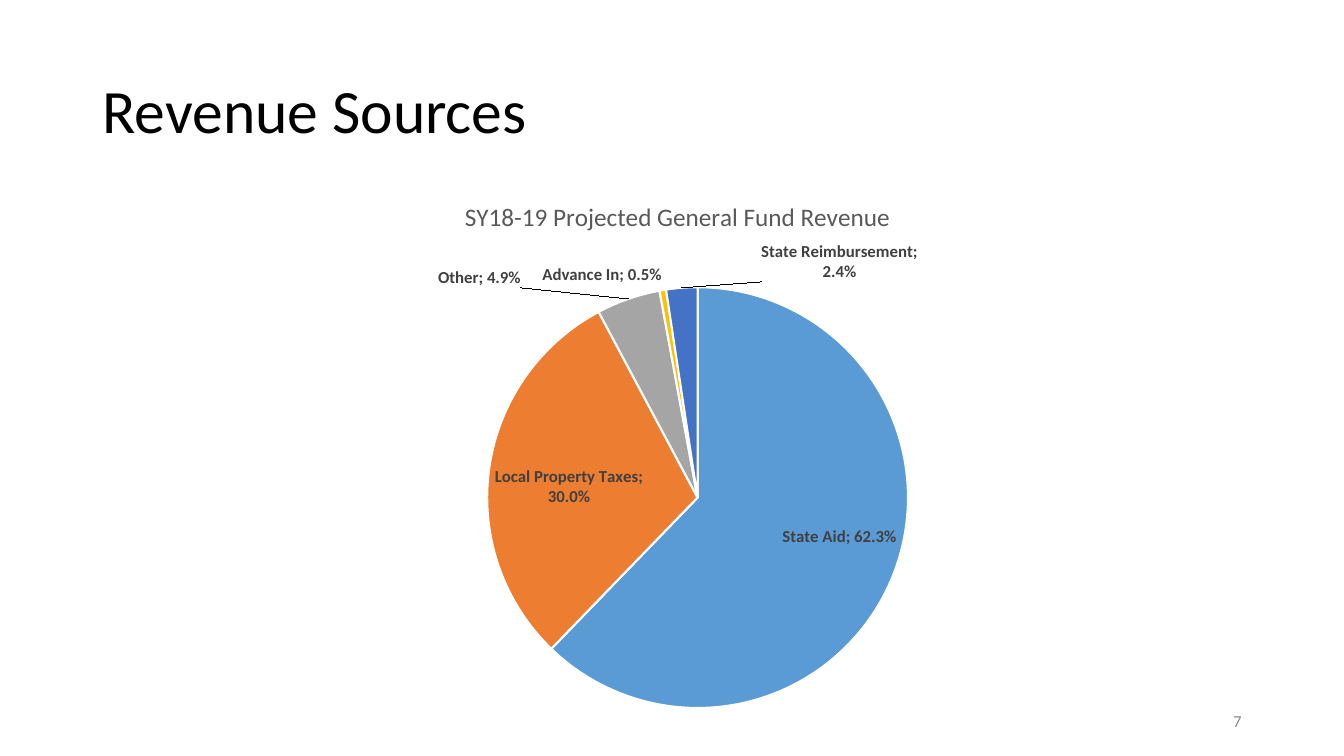
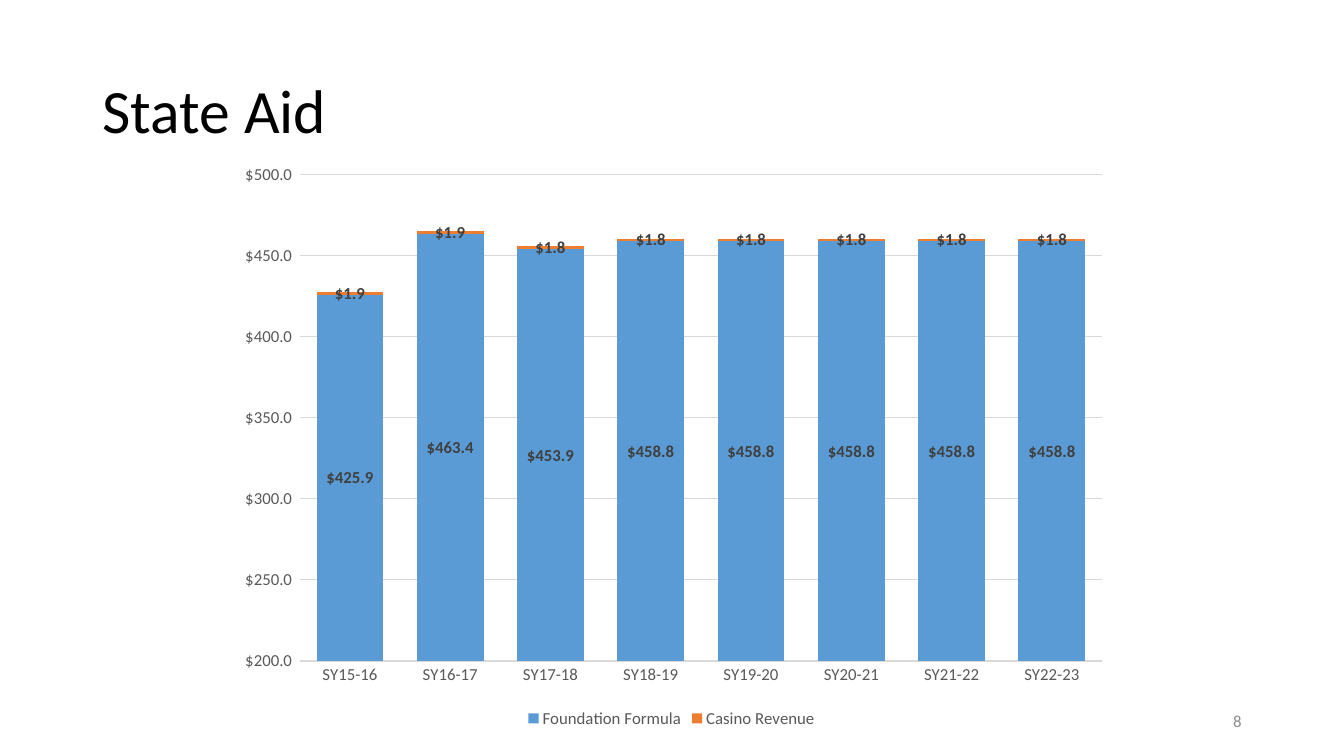
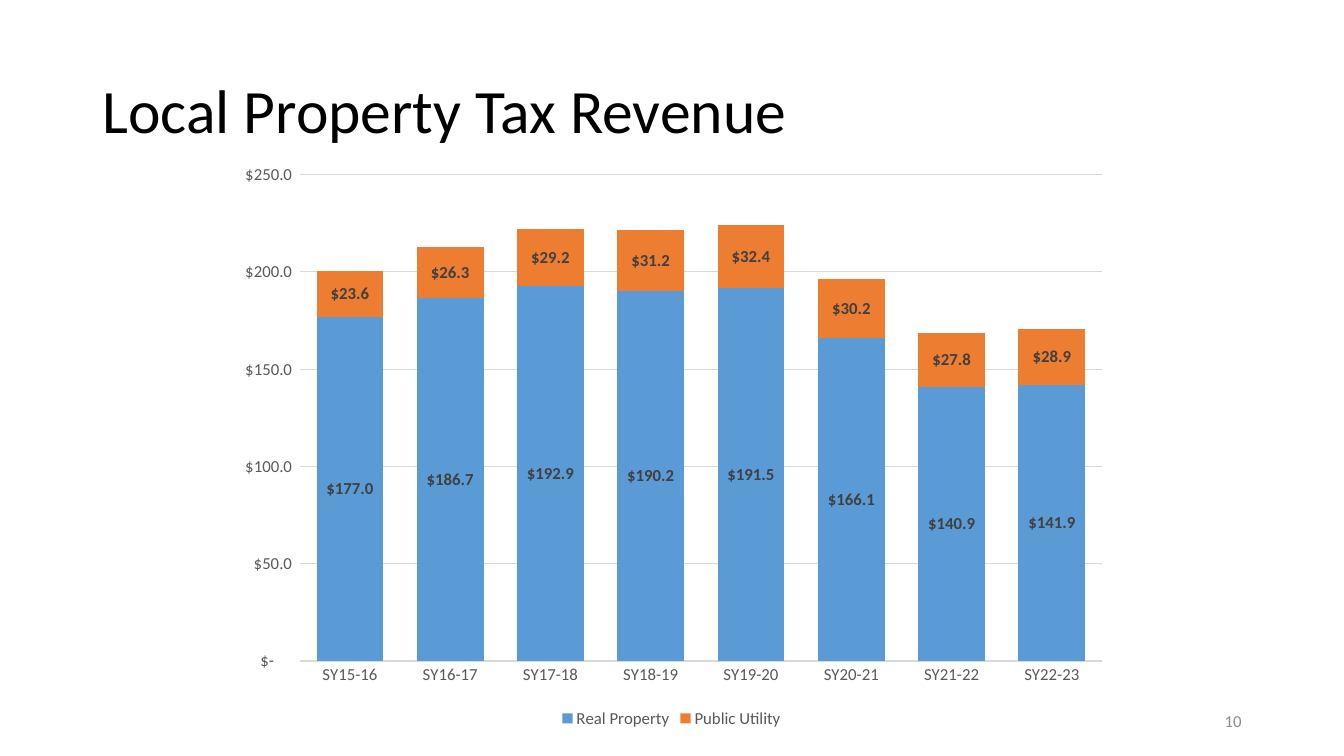
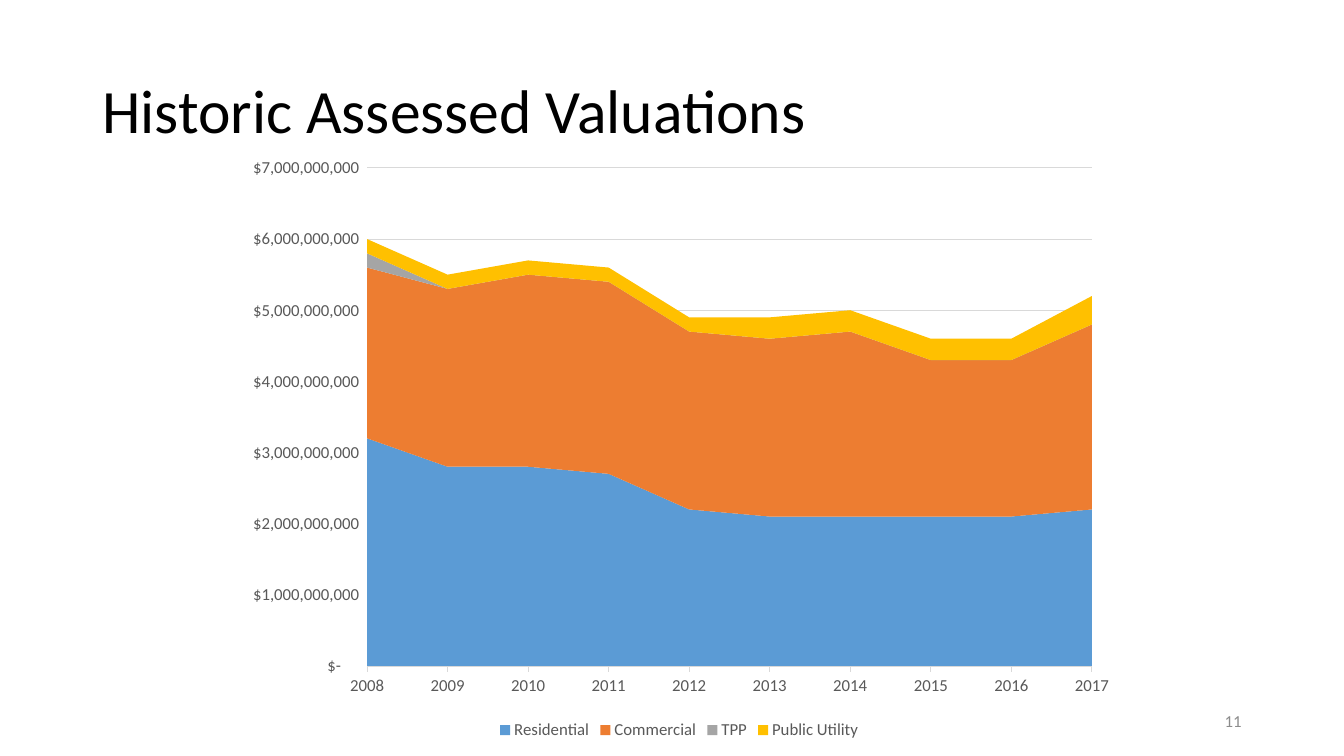
"""Build four revenue slides: a pie, two stacked column charts and an area chart."""
import lxml.etree
import pptx
import pptx.chart.data
import pptx.dml.color
import pptx.enum.chart
import pptx.enum.text
import pptx.oxml.ns
import pptx.util

RGBColor = pptx.dml.color.RGBColor
BLACK = RGBColor(0x00, 0x00, 0x00)
WHITE = RGBColor(0xFF, 0xFF, 0xFF)
NUMBER_GRAY = RGBColor(0x8C, 0x8C, 0x8C)
LABEL_GRAY = RGBColor(0x40, 0x40, 0x40)
AXIS_GRAY = RGBColor(0x59, 0x59, 0x59)
GRID_GRAY = RGBColor(0xD9, 0xD9, 0xD9)
BLUE = RGBColor(0x5B, 0x9B, 0xD5)
ORANGE = RGBColor(0xED, 0x7D, 0x31)
GRAY = RGBColor(0xA5, 0xA5, 0xA5)
YELLOW = RGBColor(0xFF, 0xC0, 0x00)
DARK_BLUE = RGBColor(0x44, 0x72, 0xC4)
PALETTE = (BLUE, ORANGE, GRAY, YELLOW, DARK_BLUE)

COLUMNS, ROWS = 16, 9
SLIDE_WIDTH = pptx.util.Inches(13.333)
SLIDE_HEIGHT = pptx.util.Inches(7.5)

TITLE_BOX = (1.1, 0.48, 13.8, 1.74)
NUMBER_BOX = (11.3, 8.34, 3.6, 0.48)
PIE_BOX, PIE_PLOT = (2.88, 2, 10.46, 6.6), (5.8, 3.42, 5.01, 5.01)
PIE_TITLE_CORNER = (5.48, 2.32)
COLUMN_BOX, COLUMN_PLOT = (2.66, 1.84, 10.67, 6.88), (3.57, 2.08, 9.55, 5.79)
AREA_BOX, AREA_PLOT = (2.75, 1.74, 10.67, 7.12), (4.37, 2, 8.63, 5.93)

TITLE_FONT = {"size": 44, "color": BLACK}
NUMBER_FONT = {"size": 12, "color": NUMBER_GRAY}
CHART_FONT = {"size": 10, "color": BLACK}
CHART_TITLE_FONT = {"size": 18, "color": AXIS_GRAY, "bold": False}
AXIS_FONT = {"size": 12, "color": AXIS_GRAY}
LABEL_FONT = {"size": 12, "color": LABEL_GRAY, "bold": True}

PERCENT = "0.0%"
TENTHS = r'_("$"* #,##0.0_);_("$"* \(#,##0.0\);_("$"* "-"??_);_(@_)'
DOLLARS = r'_("$"* #,##0_);_("$"* \(#,##0\);_("$"* "-"??_);_(@_)'
BILLION = 10 ** 9

REVENUE_SHARES = {
    "State Aid": 0.623,
    "Local Property Taxes": 0.3,
    "Other": 0.049,
    "Advance In": 0.005,
    "State Reimbursement": 0.024,
}
LABEL_SHIFTS = {2: (-0.12, -0.01), 4: (0.18, 0)}
SCHOOL_YEARS = [f"SY{year}-{year + 1}" for year in range(15, 23)]
STATE_AID = {
    "Foundation Formula": [425.9, 463.4, 453.9] + [458.8] * 5,
    "Casino Revenue": [1.9] * 2 + [1.8] * 6,
}
PROPERTY_TAX = {
    "Real Property": [177, 186.7, 192.9, 190.2, 191.5, 166.1, 140.9, 141.9],
    "Public Utility": [23.6, 26.3, 29.2, 31.2, 32.4, 30.2, 27.8, 28.9],
}
VALUATION_YEARS = [str(year) for year in range(2008, 2018)]
VALUATIONS_IN_BILLIONS = {
    "Residential": [3.2, 2.8, 2.8, 2.7, 2.2, 2.1, 2.1, 2.1, 2.1, 2.2],
    "Commercial": [2.4, 2.5, 2.7, 2.7, 2.5, 2.5, 2.6, 2.2, 2.2, 2.6],
    "TPP": [0.2] + [0] * 9,
    "Public Utility": [0.2] * 5 + [0.3] * 4 + [0.4],
}


def set_values(target, values):
    """Set every attribute named in a dict."""
    for name, value in values.items():
        setattr(target, name, value)


def set_font(font, values):
    """Format a font from a dict of size, colour and weight."""
    font.color.rgb = values["color"]
    set_values(font, {"name": "Calibri", "size": pptx.util.Pt(values["size"]),
                      "bold": values.get("bold", False)})


def grid_box(box):
    """Turn grid columns and rows into slide lengths."""
    left, top, width, height = box
    column, row = SLIDE_WIDTH / COLUMNS, SLIDE_HEIGHT / ROWS
    return [round(length) for length in (left * column, top * row, width * column, height * row)]


def write_text(shape, text, font, alignment):
    """Put one vertically centred paragraph in a shape."""
    frame = shape.text_frame
    set_values(frame, {"text": text, "word_wrap": True,
                       "auto_size": pptx.enum.text.MSO_AUTO_SIZE.NONE,
                       "vertical_anchor": pptx.enum.text.MSO_ANCHOR.MIDDLE})
    paragraph = frame.paragraphs[0]
    paragraph.alignment = alignment
    set_font(paragraph.runs[0].font, font)
    return paragraph


def add_slide(presentation, title, number):
    """Add a slide with its title and page number."""
    slide = presentation.slides.add_slide(presentation.slide_layouts[5])
    set_values(slide.shapes.title, dict(zip(("left", "top", "width", "height"), grid_box(TITLE_BOX))))
    paragraph = write_text(slide.shapes.title, title, TITLE_FONT, pptx.enum.text.PP_ALIGN.LEFT)
    paragraph.line_spacing = 0.9
    number_box = slide.shapes.add_textbox(*grid_box(NUMBER_BOX))
    write_text(number_box, str(number), NUMBER_FONT, pptx.enum.text.PP_ALIGN.RIGHT)
    return slide


def add_element(parent, tag, index=None, **attributes):
    """Add a chart XML element at an index or at the end."""
    element = lxml.etree.Element(pptx.oxml.ns.qn(tag), attributes)
    parent.insert(len(parent) if index is None else index, element)
    return element


def add_layout(parent, index, values):
    """Give a chart part a manual layout, replacing any earlier one."""
    for layout in parent.findall(pptx.oxml.ns.qn("c:layout")):
        parent.remove(layout)
    manual = add_element(add_element(parent, "c:layout", index), "c:manualLayout")
    for name, value in values.items():
        add_element(manual, f"c:{name}", val=str(value))


def chart_shares(box, chart_box):
    """Express a grid box as shares of the chart around it."""
    left, top, width, height = chart_box
    offsets = {"x": (box[0] - left) / width, "y": (box[1] - top) / height}
    sizes = dict(zip(("w", "h"), (box[2] / width, box[3] / height))) if len(box) == 4 else {}
    return {"xMode": "edge", "yMode": "edge", **offsets, **sizes}


def add_chart(slide, kind, categories, series_values, chart_box, plot_box):
    """Add a chart whose plot area fills a given grid box."""
    data = pptx.chart.data.CategoryChartData()
    data.categories = categories
    for name, values in series_values.items():
        data.add_series(name, values)
    chart = slide.shapes.add_chart(kind, *grid_box(chart_box), data).chart
    set_font(chart.font, CHART_FONT)
    chart.has_title = False
    chart.has_legend = False
    plot_area = chart.plots[0].series[0]._element.getparent().getparent()
    add_layout(plot_area, 0, {"layoutTarget": "inner", **chart_shares(plot_box, chart_box)})
    return chart


def format_labels(labels, number_format, position):
    """Format the data labels of a series."""
    set_values(labels, {"show_value": True, "number_format": number_format,
                        "number_format_is_linked": False, "position": position})
    set_font(labels.font, LABEL_FONT)


def format_line(line, color, points):
    """Set the colour and width of a line."""
    line.color.rgb = color
    line.width = pptx.util.Pt(points)


def shift_label(point, labels, index, shift):
    """Move one pie label away from its usual place."""
    label = point.data_label
    label.position = pptx.enum.chart.XL_LABEL_POSITION.BEST_FIT
    set_font(label.font, LABEL_FONT)
    element = labels._element.xpath(f"c:dLbl[c:idx/@val='{index}']")[0]
    add_layout(element, 1, dict(zip("xy", shift)))
    add_element(element, "c:numFmt", 2, formatCode=PERCENT, sourceLinked="0")
    element.find(pptx.oxml.ns.qn("c:showCatName")).set("val", "1")
    element.find(pptx.oxml.ns.qn("c:showPercent")).set("val", "0")


def add_pie(slide):
    """Add the pie of revenue shares."""
    chart = add_chart(slide, pptx.enum.chart.XL_CHART_TYPE.PIE, list(REVENUE_SHARES),
                      {"Series 1": list(REVENUE_SHARES.values())}, PIE_BOX, PIE_PLOT)
    chart.has_title = True
    title = chart.chart_title
    title.text_frame.text = "SY18-19 Projected General Fund Revenue"
    set_font(title.text_frame.paragraphs[0].runs[0].font, CHART_TITLE_FONT)
    add_layout(title._element, 1, chart_shares(PIE_TITLE_CORNER, PIE_BOX))
    chart.plots[0].vary_by_categories = True
    series = chart.plots[0].series[0]
    labels = series.data_labels
    format_labels(labels, PERCENT, pptx.enum.chart.XL_LABEL_POSITION.BEST_FIT)
    labels.show_category_name = True
    for index, color in enumerate(PALETTE):
        point = series.points[index]
        point.format.fill.solid()
        point.format.fill.fore_color.rgb = color
        format_line(point.format.line, WHITE, 1.5)
        if index in LABEL_SHIFTS:
            shift_label(point, labels, index, LABEL_SHIFTS[index])


def format_axes(chart, number_format, category_tick):
    """Format both axes, the gridlines and the legend."""
    ticks = pptx.enum.chart.XL_TICK_MARK
    for axis, tick in ((chart.category_axis, category_tick), (chart.value_axis, ticks.NONE)):
        set_values(axis, {"major_tick_mark": tick, "minor_tick_mark": ticks.NONE})
        set_font(axis.tick_labels.font, AXIS_FONT)
    format_line(chart.category_axis.format.line, GRID_GRAY, 0.75)
    chart.value_axis.format.line.fill.background()
    format_line(chart.value_axis.major_gridlines.format.line, GRID_GRAY, 0.75)
    set_values(chart.value_axis.tick_labels,
               {"number_format": number_format, "number_format_is_linked": False})
    chart.has_legend = True
    set_values(chart.legend, {"position": pptx.enum.chart.XL_LEGEND_POSITION.BOTTOM,
                              "include_in_layout": False})
    set_font(chart.legend.font, AXIS_FONT)


def color_series(chart):
    """Fill the series with the palette in order."""
    chart.plots[0].vary_by_categories = False
    for series, color in zip(chart.plots[0].series, PALETTE):
        series.format.fill.solid()
        series.format.fill.fore_color.rgb = color


def add_columns(slide, series_values, scale):
    """Add a stacked column chart by school year."""
    chart = add_chart(slide, pptx.enum.chart.XL_CHART_TYPE.COLUMN_STACKED, SCHOOL_YEARS,
                      series_values, COLUMN_BOX, COLUMN_PLOT)
    format_axes(chart, TENTHS, pptx.enum.chart.XL_TICK_MARK.NONE)
    set_values(chart.value_axis, scale)
    set_values(chart.plots[0], {"gap_width": 50, "overlap": 100})
    color_series(chart)
    for series in chart.plots[0].series:
        format_labels(series.data_labels, TENTHS, pptx.enum.chart.XL_LABEL_POSITION.CENTER)


def add_area(slide):
    """Add the stacked area chart of assessed valuations."""
    valuations = {name: [round(value * BILLION) for value in values]
                  for name, values in VALUATIONS_IN_BILLIONS.items()}
    chart = add_chart(slide, pptx.enum.chart.XL_CHART_TYPE.AREA_STACKED, VALUATION_YEARS,
                      valuations, AREA_BOX, AREA_PLOT)
    format_axes(chart, DOLLARS, pptx.enum.chart.XL_TICK_MARK.OUTSIDE)
    color_series(chart)


def main():
    """Build and save the presentation."""
    presentation = pptx.Presentation()
    set_values(presentation, {"slide_width": SLIDE_WIDTH, "slide_height": SLIDE_HEIGHT})
    add_pie(add_slide(presentation, "Revenue Sources", 7))
    add_columns(add_slide(presentation, "State Aid", 8), STATE_AID, {"minimum_scale": 200})
    add_columns(add_slide(presentation, "Local Property Tax Revenue", 10), PROPERTY_TAX, {})
    add_area(add_slide(presentation, "Historic Assessed Valuations", 11))
    presentation.save("out.pptx")


if __name__ == "__main__":
    main()
